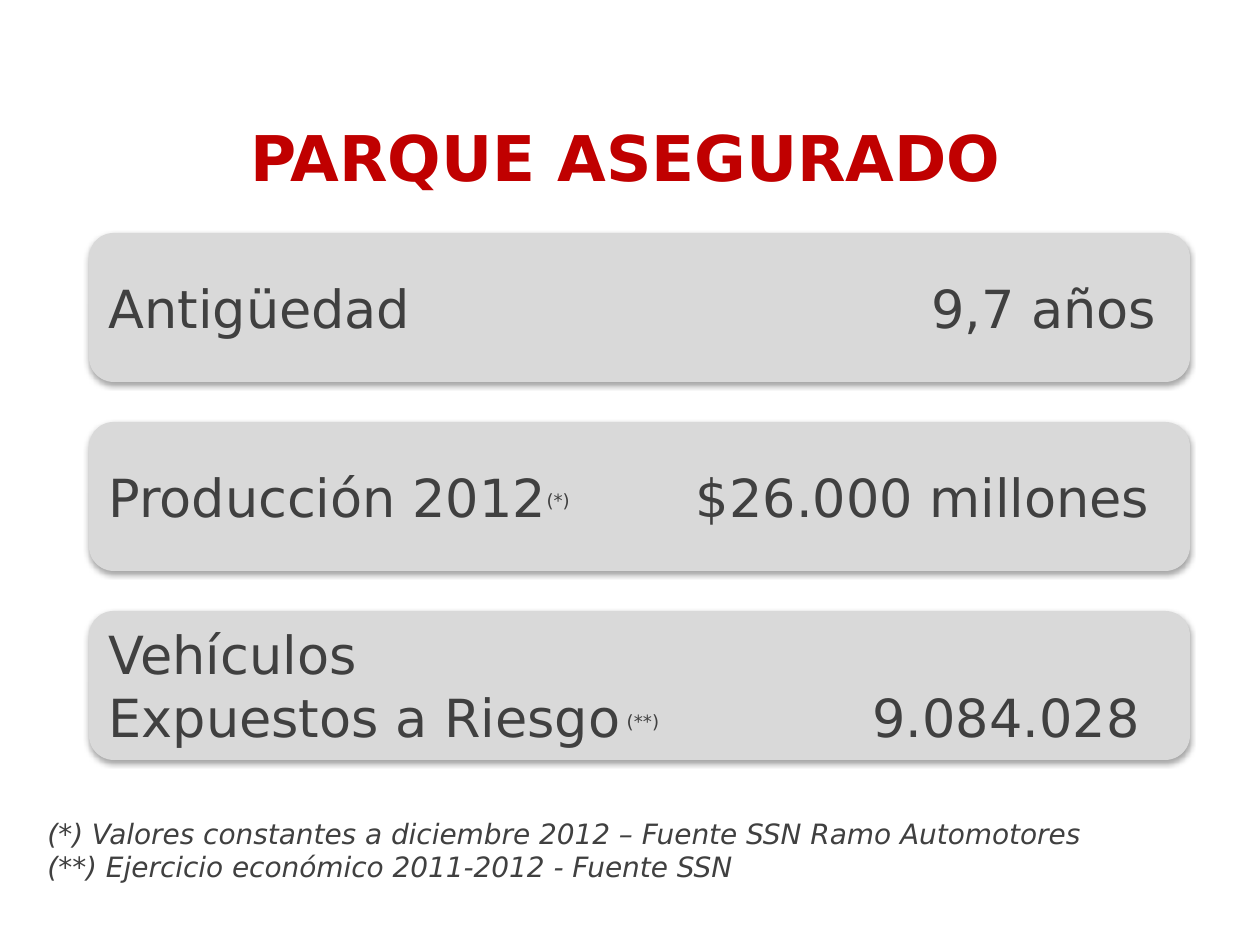
from lxml import etree
from pptx import Presentation
from pptx import util as u
from pptx.dml.color import RGBColor
from pptx.enum import shapes, text
from pptx.oxml import ns

FONT = "DejaVu Sans"
COLORS = {"title": "C00000", "body": "404040", "card": "D9D9D9", "shadow": "000000"}

TITLE = "PARQUE ASEGURADO"
CARDS = [
    {"lines": ["Antigüedad"], "mark": "", "value": "9,7 años", "tab": 1048},
    {"lines": ["Producción 2012"], "mark": "(*)", "value": "$26.000 millones", "tab": 1041},
    {"lines": ["Vehículos", "Expuestos a Riesgo"], "mark": " (**)", "value": "9.084.028", "tab": 1031},
]
NOTES = [
    "(*) Valores constantes a diciembre 2012 – Fuente SSN Ramo Automotores",
    "(**) Ejercicio económico 2011-2012 - Fuente SSN",
]

TITLE_BOX = (54, 116, 1143, 81)
NOTES_BOX = (35, 810, 1201, 81)
CARD_LEFT, CARD_TOP, CARD_W, CARD_H, CARD_STEP = 89, 233, 1101, 149, 189


def px(n):
    return u.Emu(round(n * 914400 / 126))


def add_text(p, content, size=30, color="body", bold=False, italic=False, raised=False):
    r = p.add_run()
    r.text = content
    r.font.name = FONT
    r.font.size = u.Pt(size)
    r.font.bold = bold
    r.font.italic = italic
    r.font.color.rgb = RGBColor.from_string(COLORS[color])
    if raised:
        r.font._element.set("baseline", "30000")


def add_box(s, box, anchor):
    tf = s.shapes.add_textbox(*map(px, box)).text_frame
    tf.word_wrap = True
    tf.vertical_anchor = anchor
    return tf


def add_shadow(sp):
    effects = etree.SubElement(sp._element.spPr, ns.qn("a:effectLst"))
    shadow = etree.SubElement(effects, ns.qn("a:outerShdw"), blurRad=str(u.Pt(3.1)),
                              dist=str(u.Pt(1.8)), dir="5400000", rotWithShape="0")
    color = etree.SubElement(shadow, ns.qn("a:srgbClr"), val=COLORS["shadow"])
    etree.SubElement(color, ns.qn("a:alpha"), val="35000")


def add_right_tab(p, position):
    tabs = etree.SubElement(p._p.get_or_add_pPr(), ns.qn("a:tabLst"))
    etree.SubElement(tabs, ns.qn("a:tab"), pos=str(px(position)), algn="r")


def add_card(s, top, card):
    box = (CARD_LEFT, top, CARD_W, CARD_H)
    sp = s.shapes.add_shape(shapes.MSO_SHAPE.ROUNDED_RECTANGLE, *map(px, box))
    sp.fill.solid()
    sp.fill.fore_color.rgb = RGBColor.from_string(COLORS["card"])
    sp.line.fill.background()
    add_shadow(sp)
    tf = sp.text_frame
    tf.word_wrap = True
    tf.vertical_anchor = text.MSO_ANCHOR.MIDDLE
    for i, line in enumerate(card["lines"]):
        p = tf.add_paragraph() if i else tf.paragraphs[0]
        p.alignment = text.PP_ALIGN.LEFT
        add_text(p, line)
    add_right_tab(p, card["tab"])
    if card["mark"]:
        add_text(p, card["mark"], size=18, raised=True)
    add_text(p, "\t" + card["value"])


def main():
    prs = Presentation()
    prs.slide_width, prs.slide_height = u.Inches(10), u.Inches(7.5)
    s = prs.slides.add_slide(prs.slide_layouts[6])

    p = add_box(s, TITLE_BOX, text.MSO_ANCHOR.MIDDLE).paragraphs[0]
    p.alignment = text.PP_ALIGN.CENTER
    add_text(p, TITLE, size=36, color="title", bold=True)

    for i, card in enumerate(CARDS):
        add_card(s, CARD_TOP + i * CARD_STEP, card)

    tf = add_box(s, NOTES_BOX, text.MSO_ANCHOR.TOP)
    for i, note in enumerate(NOTES):
        p = tf.add_paragraph() if i else tf.paragraphs[0]
        add_text(p, note, size=16, italic=True)

    prs.save("out.pptx")


if __name__ == "__main__":
    main()
